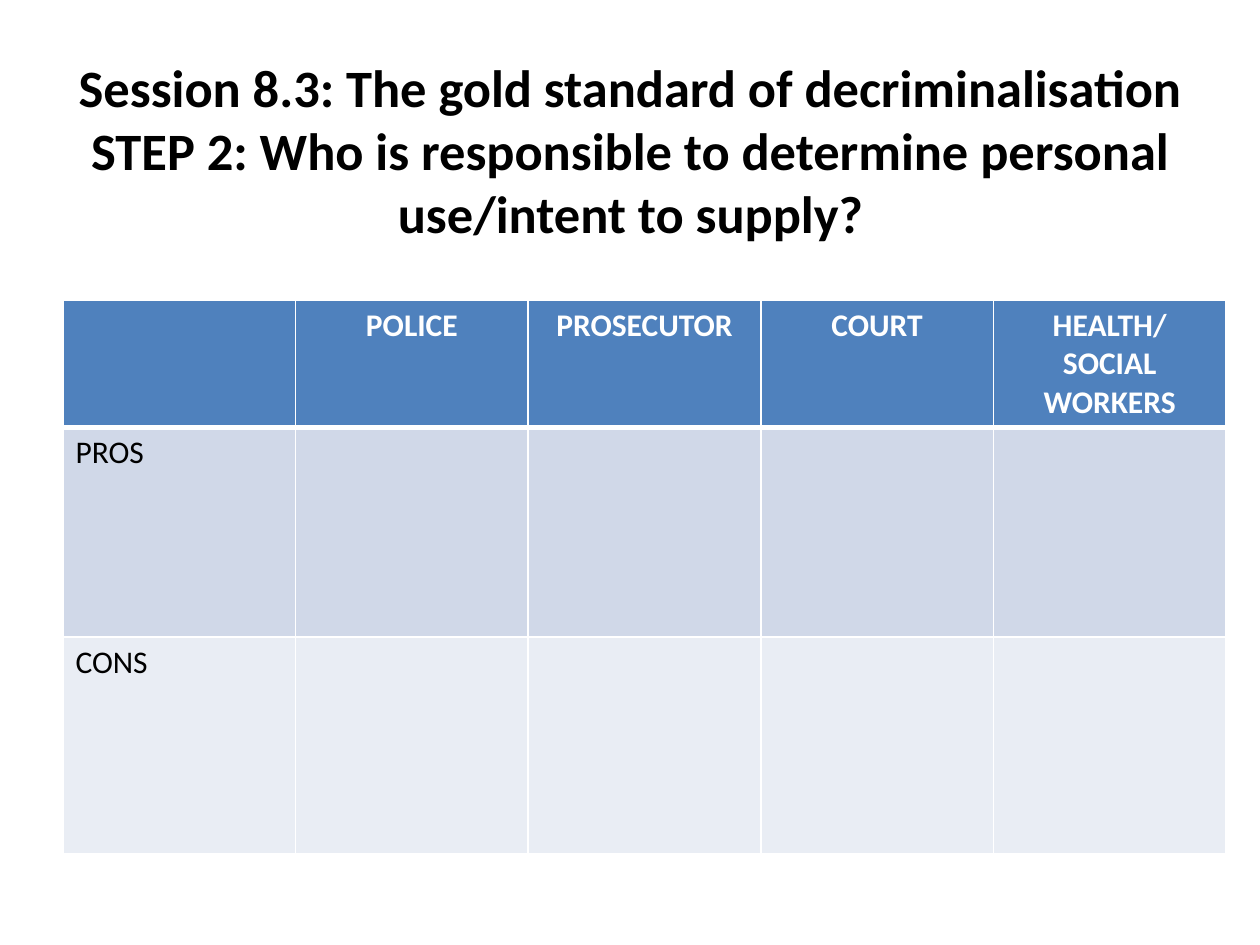
import pptx
import pptx.util
import pptx.dml.color
import pptx.enum.text
import pptx.oxml
import pptx.oxml.ns

Cm, Pt = pptx.util.Cm, pptx.util.Pt
MID = pptx.enum.text.PP_ALIGN.CENTER

TITLE = (
    "Session 8.3: The gold standard of decriminalisation\n"
    "STEP 2: Who is responsible to determine personal use/intent to supply?"
)
HEADS = ["", "POLICE", "PROSECUTOR", "COURT", "HEALTH/SOCIAL WORKERS"]
# label cells, height in cm, fill
ROWS = [
    (HEADS, 2.57, "head"),
    (["PROS"], 4.22, "pros"),
    (["CONS"], 4.37, "cons"),
]
COLORS = {
    "head": "4F81BD",
    "pros": "D0D8E8",
    "cons": "E9EDF4",
    "dark": "000000",
    "light": "FFFFFF",
}
WIDTH = 23.45


def rgb(name):
    return pptx.dml.color.RGBColor.from_string(COLORS[name])


def write(frame, text, size, color, bold, align=None):
    para = frame.paragraphs[0]
    para.text = text
    para.alignment = align
    for font in [para.font] + [run.font for run in para.runs]:
        font.name, font.size, font.bold = "Calibri", Pt(size), bold
        font.color.rgb = rgb(color)


def edge(cell, side, width):
    """Draw one white border of a cell; side is L, R, T or B."""
    cell._tc.get_or_add_tcPr().append(pptx.oxml.parse_xml(
        f'<a:ln{side} {pptx.oxml.ns.nsdecls("a")} w="{Pt(width)}">'
        f'<a:solidFill><a:srgbClr val="{COLORS["light"]}"/></a:solidFill>'
        f'</a:ln{side}>'
    ))


def add_title(slide):
    box = slide.shapes.add_textbox(Cm(0.69), Cm(0.76), Cm(24.05), Cm(4.5))
    frame = box.text_frame
    frame.word_wrap = True
    frame.vertical_anchor = pptx.enum.text.MSO_ANCHOR.MIDDLE
    write(frame, TITLE, 30, "dark", True, MID)


def add_grid(slide):
    high = sum(row[1] for row in ROWS)
    table = slide.shapes.add_table(
        len(ROWS), len(HEADS), Cm(1.27), Cm(6.05), Cm(WIDTH), Cm(high)
    ).table
    for col in table.columns:
        col.width = Cm(WIDTH / len(HEADS))
    for r, (texts, height, fill) in enumerate(ROWS):
        table.rows[r].height = Cm(height)
        head = r == 0
        for c in range(len(HEADS)):
            cell = table.cell(r, c)
            for side in "LRTB":
                thick = (head and side == "B") or (r == 1 and side == "T")
                edge(cell, side, 3 if thick else 1)
            cell.fill.solid()
            cell.fill.fore_color.rgb = rgb(fill)
            text = texts[c] if c < len(texts) else ""
            write(cell.text_frame, text, 18, "light" if head else "dark",
                  head, MID if head else None)


def main():
    deck = pptx.Presentation()
    deck.slide_width, deck.slide_height = Cm(25.4), Cm(19.05)
    slide = deck.slides.add_slide(deck.slide_layouts[6])
    add_title(slide)
    add_grid(slide)
    deck.save("out.pptx")


if __name__ == "__main__":
    main()
